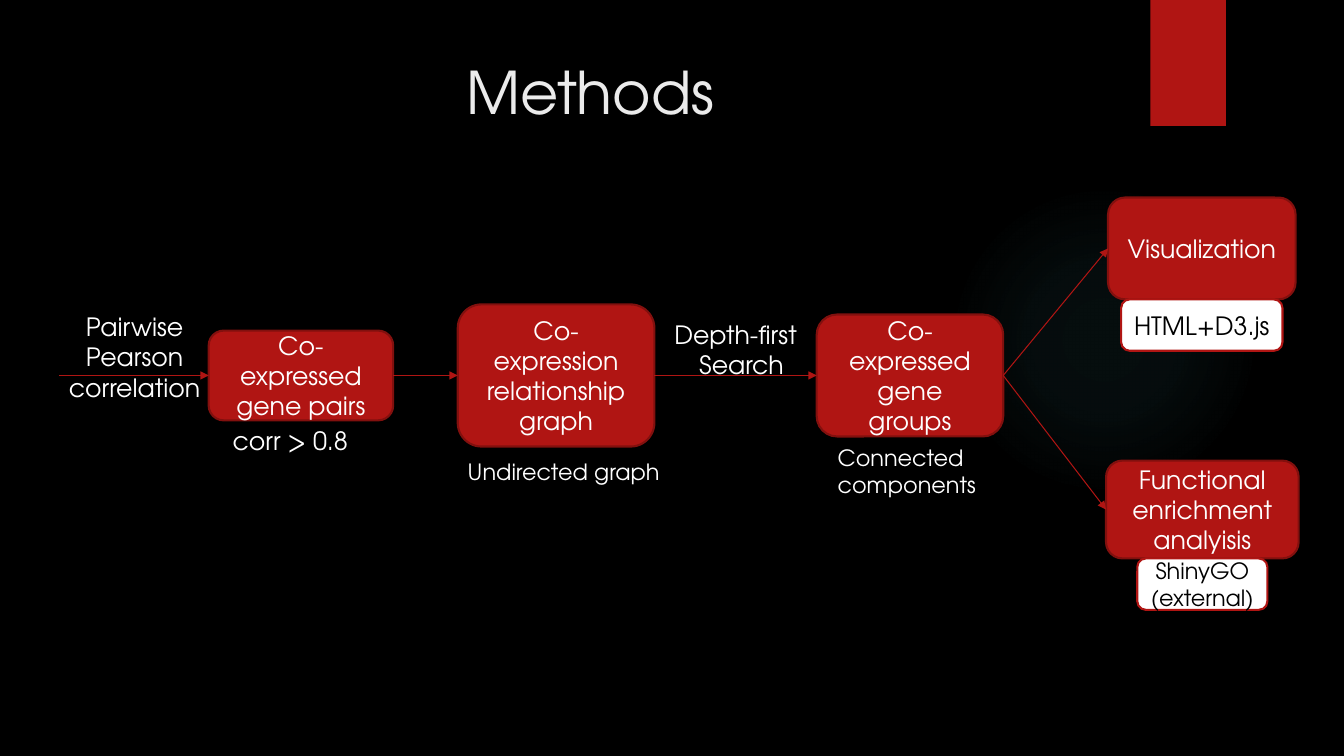
from dataclasses import dataclass

from lxml import etree
from pptx import Presentation
from pptx import util as u
from pptx.dml import color
from pptx.enum import shapes, text
from pptx.oxml import ns, parse_xml

SCALE = 9144
KIND = shapes.MSO_SHAPE
ALIGN = text.PP_ALIGN
ANCHOR = text.MSO_ANCHOR
FIT = text.MSO_AUTO_SIZE
LEFT, RIGHT = 1, 3


@dataclass(frozen=True)
class Theme:
    font: str = "TeX Gyre Adventor"
    back: str = "000000"
    red: str = "B01513"
    edge: str = "82100E"
    white: str = "FFFFFF"
    pale: str = "EBEBEB"
    glow: str = "50B9C1"
    head: int = 42
    body: int = 18
    small: int = 16


def px(*vals):
    return [u.Emu(val * SCALE) for val in vals]


def rgb(code):
    return color.RGBColor.from_string(code)


def put(item, form):
    for name, val in form.items():
        setattr(item, name, val)


class Board:
    def __init__(self, deck, theme):
        self.theme = theme
        self.slide = deck.slides.add_slide(deck.slide_layouts[5])
        self.shapes = self.slide.shapes
        fill = self.slide.background.fill
        fill.solid()
        fill.fore_color.rgb = rgb(theme.back)

    def words(self, shape, lines, size, ink, form, aligns):
        frame = shape.text_frame
        frame.text = "\n".join(lines)
        put(frame, {"word_wrap": True, **form})
        for para, align in zip(frame.paragraphs, aligns):
            para.alignment = align
            for run in para.runs:
                put(run.font, {"name": self.theme.font, "size": u.Pt(size)})
                run.font.color.rgb = rgb(ink)

    def title(self, line, spot):
        shape = self.shapes.title
        put(shape, dict(zip(("left", "top", "width", "height"), px(*spot))))
        form = {"vertical_anchor": ANCHOR.TOP, "auto_size": FIT.NONE}
        self.words(shape, [line], self.theme.head, self.theme.pale, form, [ALIGN.CENTER])

    def plain(self, kind, spot, fill):
        shape = self.shapes.add_shape(kind, *px(*spot))
        shape.shadow.inherit = False
        shape.fill.solid()
        shape.fill.fore_color.rgb = rgb(fill)
        shape.line.fill.background()
        return shape

    def glow(self, spot, stops):
        shape = self.plain(KIND.OVAL, spot, self.theme.glow)
        marks = "".join(
            f'<a:gs pos="{pos * 1000}"><a:srgbClr val="{self.theme.glow}">'
            f'<a:alpha val="{alpha * 1000}"/></a:srgbClr></a:gs>'
            for pos, alpha in stops
        )
        grad = parse_xml(
            f'<a:gradFill {ns.nsdecls("a")}><a:gsLst>{marks}</a:gsLst><a:path path="circle">'
            '<a:fillToRect l="50000" t="50000" r="50000" b="50000"/></a:path></a:gradFill>'
        )
        props = shape.element.spPr
        props.replace(props.find(ns.qn("a:solidFill")), grad)

    def box(self, spot, lines, fill, edge, ink, size):
        shape = self.plain(KIND.ROUNDED_RECTANGLE, spot, fill)
        shape.line.color.rgb = rgb(edge)
        shape.line.width = u.Pt(1.5)
        form = {"vertical_anchor": ANCHOR.MIDDLE}
        self.words(shape, lines, size, ink, form, [ALIGN.CENTER] * len(lines))
        return shape

    def step(self, spot, *lines):
        theme = self.theme
        return self.box(spot, lines, theme.red, theme.edge, theme.white, theme.body)

    def tool(self, spot, size, *lines):
        theme = self.theme
        return self.box(spot, lines, theme.white, theme.red, theme.back, size)

    def label(self, spot, lines, size, aligns):
        shape = self.shapes.add_textbox(*px(*spot))
        form = {"auto_size": FIT.SHAPE_TO_FIT_TEXT}
        self.words(shape, lines, size, self.theme.white, form, aligns)

    def arrow(self, start, end):
        link = self.shapes.add_connector(shapes.MSO_CONNECTOR.STRAIGHT, *px(59, 373, 207, 373))
        if start is not None:
            link.begin_connect(start, RIGHT)
        else:
            link.begin_y = end.top + end.height // 2
        link.end_connect(end, LEFT)
        link.line.color.rgb = rgb(self.theme.red)
        link.line.width = u.Pt(0.75)
        props = link.element.spPr
        etree.SubElement(props.get_or_add_ln(), ns.qn("a:tailEnd"), type="triangle")
        etree.SubElement(props, ns.qn("a:effectLst"))


def main():
    deck = Presentation()
    deck.slide_width, deck.slide_height = px(1333, 750)
    theme = Theme()
    board = Board(deck, theme)

    board.glow((941, 183, 308, 308), [(0, 7), (36, 6), (69, 0)])
    board.plain(KIND.RECTANGLE, (1141, 0, 75, 125), theme.red)
    board.title("Methods", (71, 50, 1029, 153))

    pairs = board.step((207, 328, 183, 89), "Co-expressed gene pairs")
    graph = board.step((454, 302, 195, 141), "Co-expression relationship graph")
    groups = board.step((810, 312, 185, 121), "Co-expressed gene groups")
    visual = board.step((1099, 196, 186, 101), "Visualization")
    enrich = board.step((1097, 457, 191, 97), "Functional enrichment", "analyisis")

    links = [(None, pairs), (pairs, graph), (graph, groups), (groups, visual), (groups, enrich)]
    for start, end in links:
        board.arrow(start, end)

    board.tool((1128, 554, 129, 51), theme.small, "ShinyGO", "(external)")
    board.tool((1112, 297, 160, 51), theme.body, "HTML+D3.js")

    left, mid = ALIGN.LEFT, ALIGN.CENTER
    labels = [
        ((53, 304, 161, 101), ["Pairwise Pearson correlation"], theme.body, [mid]),
        ((659, 312, 153, 71), ["Depth-first", "Search"], theme.body, [left, mid]),
        ((221, 417, 154, 40), ["corr > 0.8"], theme.body, [left]),
        ((454, 450, 235, 37), ["Undirected graph"], theme.small, [left]),
        ((821, 436, 163, 64), ["Connected components"], theme.small, [left]),
    ]
    for label in labels:
        board.label(*label)

    deck.save("out.pptx")


if __name__ == "__main__":
    main()
